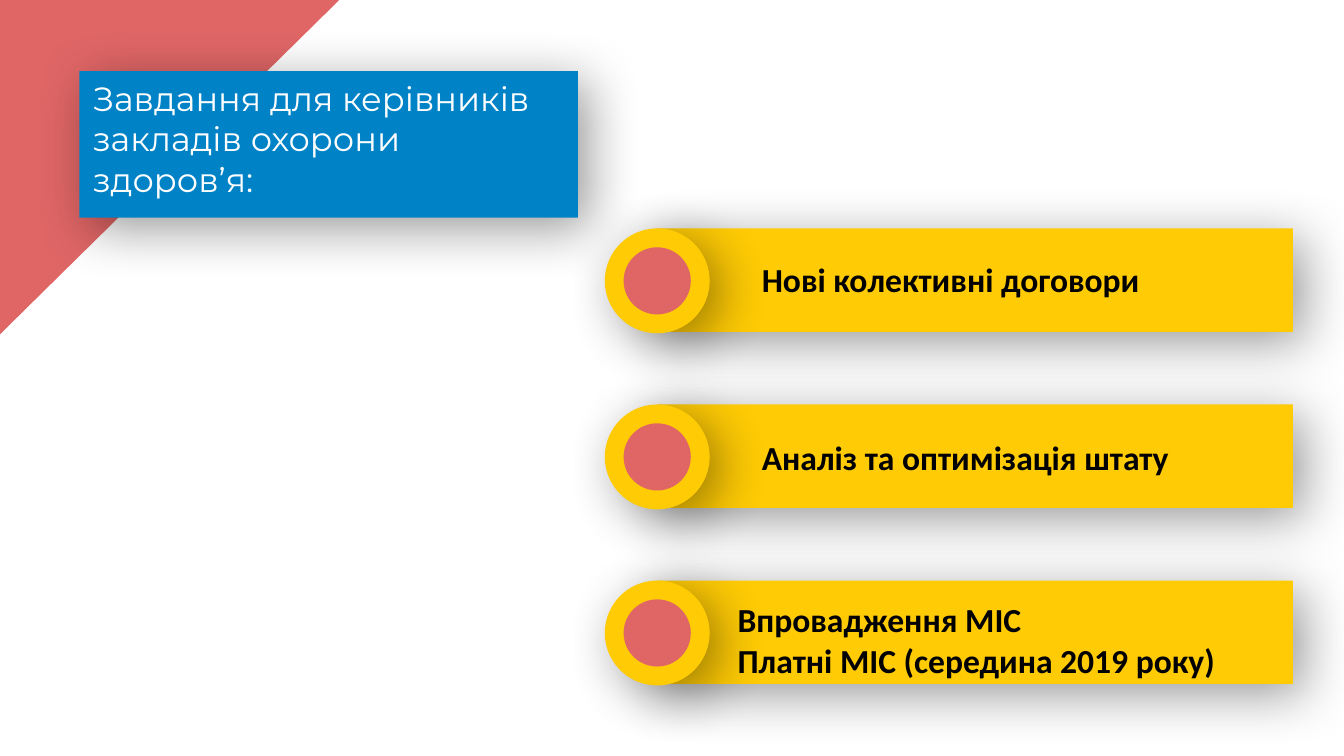
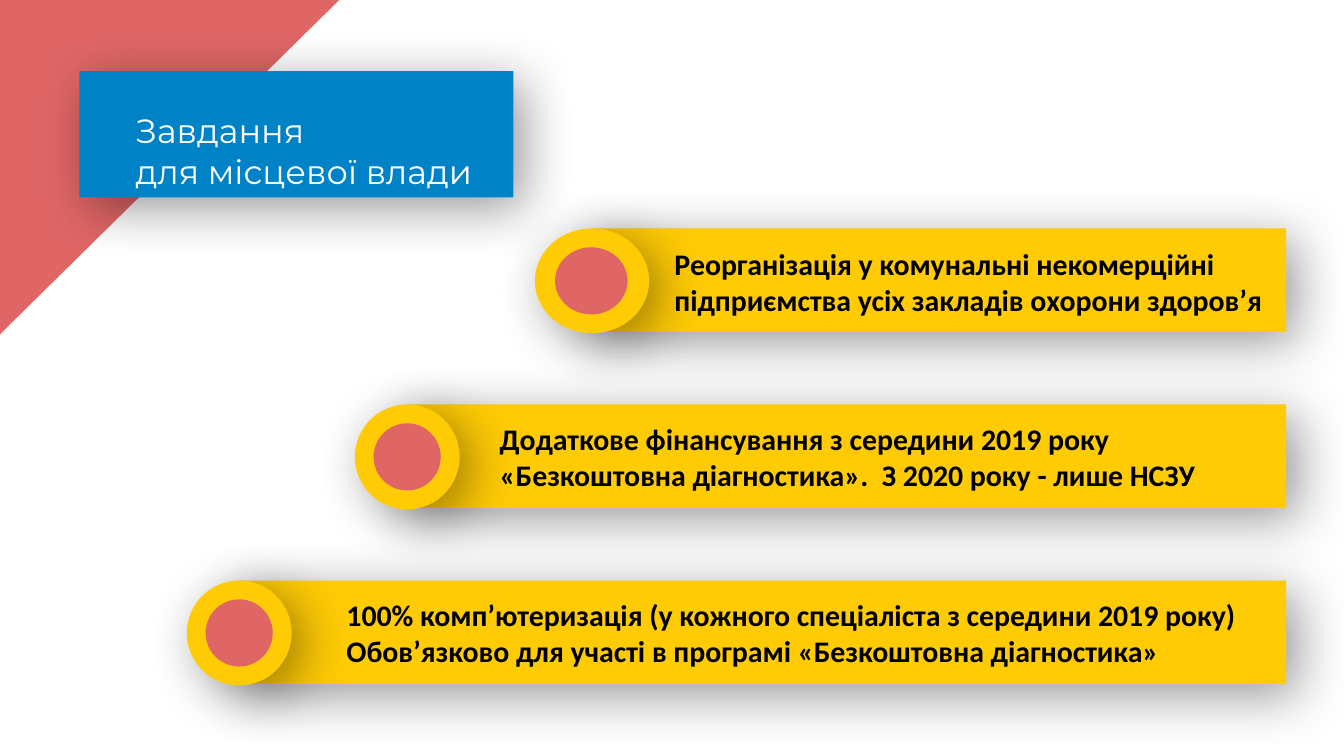
from pptx import Presentation
from pptx.dml.color import RGBColor
from pptx.enum.shapes import MSO_SHAPE
from pptx.enum.text import MSO_ANCHOR, MSO_AUTO_SIZE, PP_ALIGN
from pptx.oxml import parse_xml
from pptx.oxml.ns import nsdecls
from pptx.util import Emu, Pt

PX = 9144  # 100 px to the inch
CORAL, YELLOW, BLUE, WHITE, BLACK = "E06666", "FFCB05", "0082C6", "FFFFFF", "000000"
SHADOW = (
    f'<a:effectLst {nsdecls("a")}><a:outerShdw blurRad="{29 * 12700}" dist="{8 * 12700}" '
    f'dir="{45 * 60000}" algn="tl" rotWithShape="0"><a:srgbClr val="{BLACK}">'
    '<a:alpha val="40000"/></a:srgbClr></a:outerShdw></a:effectLst>'
)
ROW_TOP, ROW_STEP, BAR_H, RING, DOT = 170, 131, 77, 78, 50

# Rows: ring left, ring width, text box, paragraphs
SLIDES = [
    dict(
        title=["Завдання для керівників закладів охорони здоров’я:"],
        title_box=(59, 53, 371, 101), band=(59, 53, 371, 109), right=962, size=18,
        rows=[
            (450, 78, (557, 188, 397, 40), ["Нові колективні договори"]),
            (450, 78, (557, 320, 445, 40), ["Аналіз та оптимізація штату"]),
            (450, 78, (539, 441, 397, 71),
             ["Впровадження МІС", "Платні МІС (середина 2019 року)"]),
        ],
    ),
    dict(
        title=["Завдання", "для місцевої влади"],
        title_box=(91, 77, 315, 71), band=(59, 53, 323, 94), right=957, size=16,
        rows=[
            (398, 85, (492, 178, 471, 64),
             ["Реорганізація у комунальні некомерційні підприємства усіх закладів охорони здоров’я"]),
            (264, 78, (362, 308, 587, 64),
             ["Додаткове фінансування з середини 2019 року "
              "«Безкоштовна діагностика».  З 2020 року - лише НСЗУ"]),
            (139, 78, (248, 439, 703, 64),
             ["100% комп’ютеризація (у кожного спеціаліста з середини 2019 року)",
              "Обов’язково для участі в програмі «Безкоштовна діагностика»"]),
        ],
    ),
]


def add_block(shapes, kind, box, color, shadow=False):
    sp = shapes.add_shape(kind, *[Emu(v * PX) for v in box])
    sp.fill.solid()
    sp.fill.fore_color.rgb = RGBColor.from_string(color)
    sp.line.fill.background()
    if shadow:
        sp._element.spPr.append(parse_xml(SHADOW))
    else:
        sp.shadow.inherit = False
    return sp


def write_text(sp, box, lines, name, size, color, bold):
    """Place a text shape and fill it with one paragraph per line."""
    for attr, v in zip(("left", "top", "width", "height"), box):
        setattr(sp, attr, Emu(v * PX))
    tf = sp.text_frame
    frame = dict(word_wrap=True, auto_size=MSO_AUTO_SIZE.SHAPE_TO_FIT_TEXT,
                 vertical_anchor=MSO_ANCHOR.TOP)
    for attr, v in frame.items():
        setattr(tf, attr, v)
    for i, line in enumerate(lines):
        p = tf.add_paragraph() if i else tf.paragraphs[0]
        p.alignment = PP_ALIGN.LEFT
        r = p.add_run()
        r.text = line
        for attr, v in dict(name=name, size=Pt(size), bold=bold).items():
            setattr(r.font, attr, v)
        r.font.color.rgb = RGBColor.from_string(color)


prs = Presentation()
prs.slide_width = Emu(1000 * PX)
prs.slide_height = Emu(1000 * PX * 9 // 16)

for data in SLIDES:
    s = prs.slides.add_slide(prs.slide_layouts[5])
    corner = add_block(s.shapes, MSO_SHAPE.RIGHT_TRIANGLE, (-49, -40, 337, 342), CORAL)
    corner.rotation = 90
    add_block(s.shapes, MSO_SHAPE.RECTANGLE, data["band"], BLUE, shadow=True)

    title = s.shapes.title
    write_text(title, data["title_box"], data["title"], "Montserrat", 18, WHITE, False)
    s.shapes._spTree.append(title._element)  # bring the title in front of its band

    for i, (left, ring_w, text_box, lines) in enumerate(data["rows"]):
        top = ROW_TOP + i * ROW_STEP
        mid = left + ring_w // 2
        dot_w = DOT * ring_w // RING
        row = s.shapes.add_group_shape().shapes
        add_block(row, MSO_SHAPE.RECTANGLE, (mid, top, data["right"] - mid, BAR_H), YELLOW, shadow=True)
        add_block(row, MSO_SHAPE.OVAL, (left, top, ring_w, RING), YELLOW, shadow=True)
        add_block(row, MSO_SHAPE.OVAL,
                  (left + (ring_w - dot_w) // 2, top + (RING - DOT) // 2, dot_w, DOT), CORAL)
        tb = s.shapes.add_textbox(0, 0, 0, 0)
        write_text(tb, text_box, lines, "Calibri", data["size"], BLACK, True)

prs.save("out.pptx")
